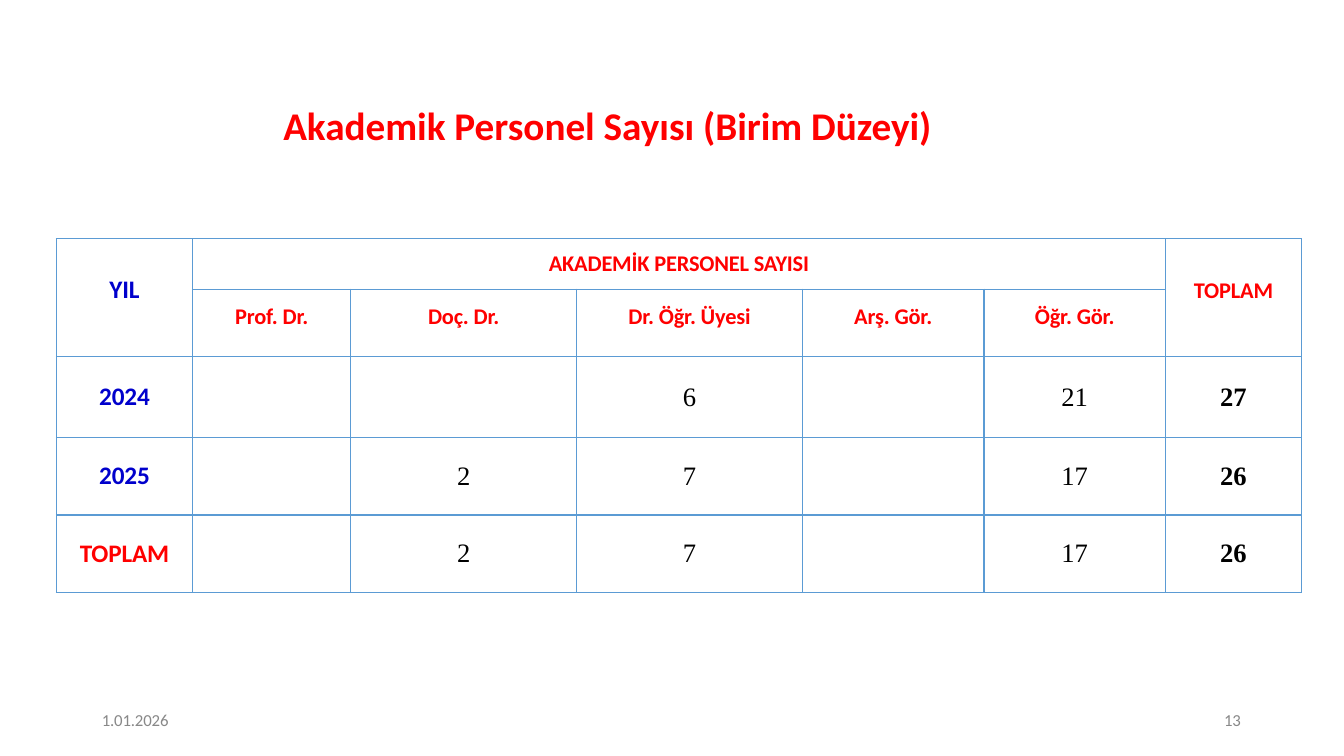
from dataclasses import dataclass
from lxml.etree import SubElement
from pptx import Presentation
from pptx.dml.color import RGBColor as Rgb
from pptx.enum.text import MSO_ANCHOR as Anchor, PP_ALIGN as Align
from pptx.oxml.ns import qn
from pptx.util import Inches, Pt


@dataclass(frozen=True)
class Theme:
    red: str = "FF0000"
    blue: str = "0000CC"
    grey: str = "888888"
    black: str = "000000"
    white: str = "FFFFFF"
    rule: str = "5B9BD4"
    sans: str = "Calibri"
    serif: str = "Times New Roman"
    title: int = 28
    num: int = 19
    label: int = 18
    head: int = 16
    foot: int = 12


T = Theme()
WIDE, HIGH = 13.33, 7.5
TITLE = "Akademik Personel Sayısı (Birim Düzeyi)"
DATE, PAGE = "1.01.2026", "13"
ROWS = [
    ["YIL", "AKADEMİK PERSONEL SAYISI", "", "", "", "", "TOPLAM"],
    ["", "Prof. Dr.", "Doç. Dr.", "Dr. Öğr. Üyesi", "Arş. Gör.", "Öğr. Gör.", ""],
    ["2024", "", "", "6", "", "21", "27"],
    ["2025", "", "2", "7", "", "17", "26"],
    ["TOPLAM", "", "2", "7", "", "17", "26"],
]
COLS = [1.35, 1.57, 2.24, 2.24, 1.8, 1.8, 1.35]
TALL = [0.5, 0.67, 0.8, 0.77, 0.77]
SPANS = [((0, 0), (1, 0)), ((0, 1), (0, 5)), ((0, 6), (1, 6))]
LIFT = {(0, 0): 0.16, (0, 6): 0.14}
SUBLIFT = 0.12


def write(frame, text, size, color, font=T.sans, bold=True, align=Align.LEFT,
          lead=None, track=0):
    para = frame.paragraphs[0]
    para.alignment = align
    if lead:
        para.line_spacing = Pt(lead)
    run = para.add_run()
    run.text = text
    run.font.size, run.font.name, run.font.bold = Pt(size), font, bold
    run.font.color.rgb = Rgb.from_string(color)
    if track:
        run.font._element.set("spc", str(track))


def place(slide, text, left, top, wide, high, **form):
    box = slide.shapes.add_textbox(*map(Inches, (left, top, wide, high)))
    frame = box.text_frame
    frame.word_wrap = True
    frame.margin_left = frame.margin_right = 0
    frame.margin_top = frame.margin_bottom = 0
    write(frame, text, **form)


def edge(cell):
    props = cell._tc.get_or_add_tcPr()
    for i, side in enumerate(("lnL", "lnR", "lnT", "lnB")):
        line = SubElement(props, qn("a:" + side), w=str(Pt(1)))
        fill = SubElement(line, qn("a:solidFill"))
        SubElement(fill, qn("a:srgbClr"), val=T.rule)
        props.remove(line)
        props.insert(i, line)


def look(row, col):
    if row > 1 and col:
        return dict(size=T.num, color=T.black, font=T.serif, bold=col == 6)
    if col == 0:
        color = T.red if row == len(ROWS) - 1 else T.blue
        return dict(size=T.label, color=color, track=-10)
    return dict(size=T.head, color=T.red, track=-10)


def grid(slide):
    shape = slide.shapes.add_table(len(TALL), len(COLS), Inches(0.56), Inches(2.37),
                                   Inches(sum(COLS)), Inches(sum(TALL)))
    table = shape.table
    table.first_row = table.horz_banding = False
    for col, wide in zip(table.columns, COLS):
        col.width = Inches(wide)
    for row, high in zip(table.rows, TALL):
        row.height = Inches(high)
    for start, end in SPANS:
        table.cell(*start).merge(table.cell(*end))
    for r, line in enumerate(ROWS):
        for c, text in enumerate(line):
            cell = table.cell(r, c)
            cell.margin_left = cell.margin_right = cell.margin_top = 0
            cell.margin_bottom = Inches(LIFT.get((r, c), SUBLIFT if r == 1 else 0))
            cell.vertical_anchor = Anchor.MIDDLE
            cell.fill.solid()
            cell.fill.fore_color.rgb = Rgb.from_string(T.white)
            edge(cell)
            if text:
                write(cell.text_frame, text, align=Align.CENTER, **look(r, c))


def main():
    deck = Presentation()
    deck.slide_width, deck.slide_height = Inches(WIDE), Inches(HIGH)
    slide = deck.slides.add_slide(deck.slide_layouts[6])
    place(slide, TITLE, 2.81, 1, 8.97, 0.69, size=T.title, color=T.red)
    grid(slide)
    foot = dict(size=T.foot, color=T.grey, bold=False, lead=12.4, track=-10)
    place(slide, DATE, 1.01, 7.07, 0.8, 0.2, **foot)
    place(slide, PAGE, 12.14, 7.07, 0.27, 0.2, **foot)
    deck.save("out.pptx")


if __name__ == "__main__":
    main()
